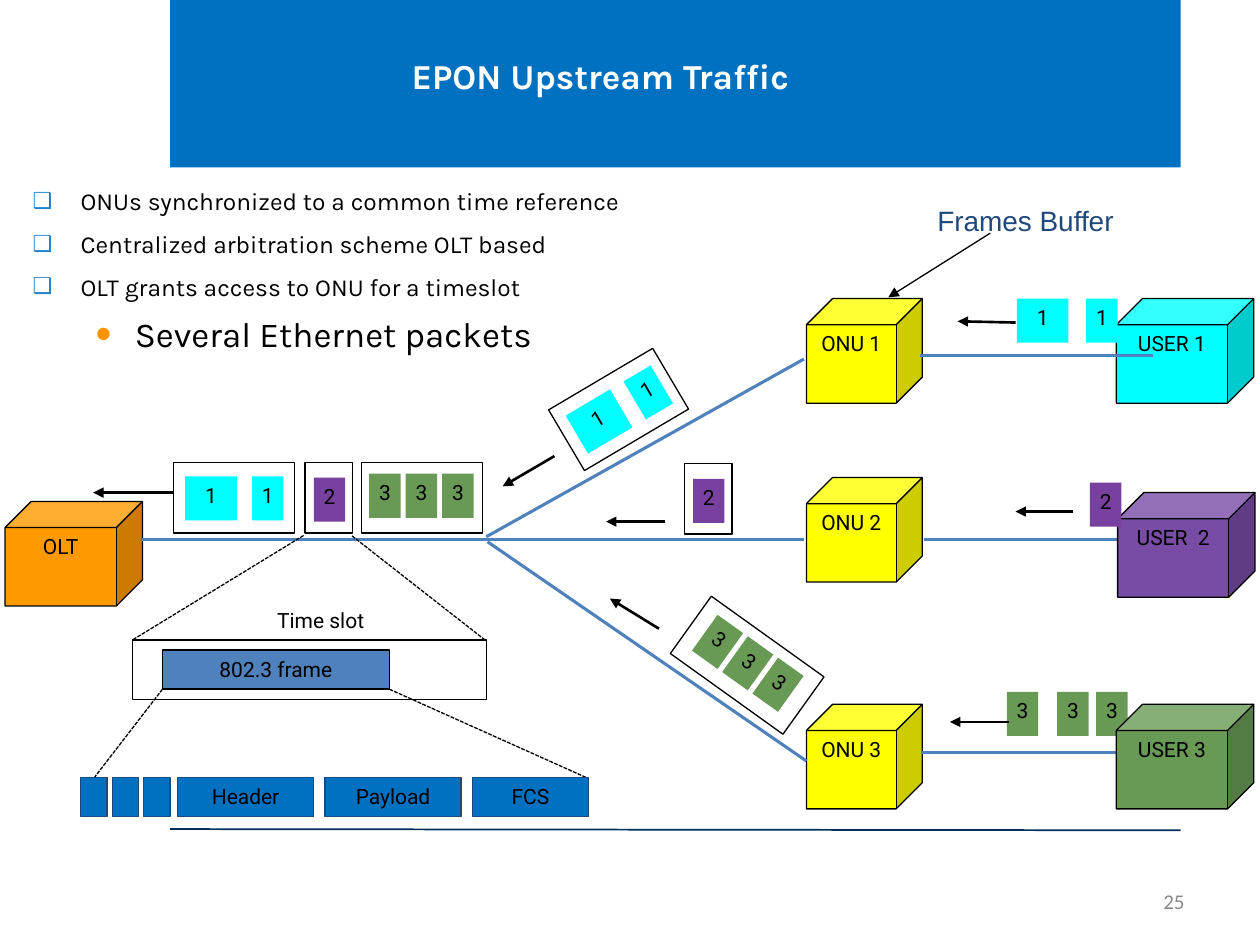
from dataclasses import dataclass
from typing import Optional

from pptx import Presentation
from pptx.dml.color import RGBColor
from pptx.enum.dml import MSO_LINE_DASH_STYLE as Dash
from pptx.enum.shapes import MSO_CONNECTOR, MSO_SHAPE as Shape
from pptx.enum.text import MSO_ANCHOR as Anchor, MSO_AUTO_SIZE as AutoSize, PP_ALIGN as Align
from pptx.oxml.ns import qn
from pptx.util import Emu, Pt

PX = 9144  # 100 px to the inch
BLACK, WHITE = "000000", "FFFFFF"
BLUE, NAVY, FIBER = "0070C0", "1F497D", "4F81BD"
YELLOW, CYAN, ORANGE = "FFFF00", "00FFFF", "FF9900"
PURPLE, VIOLET, GREEN = "7841A0", "784BA5", "689A56"


@dataclass
class Box:
    x: int
    y: int
    w: int
    h: int
    fill: Optional[str] = None
    text: str = ""
    line: Optional[str] = BLACK
    rot: float = 0
    kind: Shape = Shape.RECTANGLE


@dataclass
class Line:
    x1: int
    y1: int
    x2: int
    y2: int
    color: str = BLACK
    width: float = 1.5
    arrow: bool = False
    dashed: bool = False


def px(n: int) -> Emu:
    return Emu(n * PX)


def rgb(color: str) -> RGBColor:
    return RGBColor.from_string(color)


def place(sp, x: int, y: int, w: int, h: int) -> None:
    sp.left, sp.top, sp.width, sp.height = px(x), px(y), px(w), px(h)


def style(p, size: int, font: str, color: str = BLACK, align=Align.CENTER, bold: bool = False) -> None:
    p.alignment = align
    f = p.font
    f.size, f.name, f.bold = Pt(size), font, bold
    f.color.rgb = rgb(color)


def draw_box(slide, b: Box):
    sp = slide.shapes.add_shape(b.kind, px(b.x), px(b.y), px(b.w), px(b.h))
    sp.shadow.inherit = False
    sp.rotation = b.rot
    if b.fill:
        sp.fill.solid()
        sp.fill.fore_color.rgb = rgb(b.fill)
    else:
        sp.fill.background()
    if b.line:
        sp.line.color.rgb = rgb(b.line)
        sp.line.width = Pt(0.75)
    else:
        sp.line.fill.background()
    if b.text:
        tf = sp.text_frame
        tf.margin_left = tf.margin_right = 0
        tf.vertical_anchor = Anchor.TOP
        tf.text = b.text
        style(tf.paragraphs[0], 12, "Roboto")
    return sp


def draw_line(slide, n: Line) -> None:
    c = slide.shapes.add_connector(MSO_CONNECTOR.STRAIGHT, px(n.x1), px(n.y1), px(n.x2), px(n.y2))
    c.line.color.rgb = rgb(n.color)
    c.line.width = Pt(n.width)
    if n.dashed:
        c.line.dash_style = Dash.SQUARE_DOT
    props = c._element.spPr
    if n.arrow:
        ln = props.find(qn("a:ln"))
        ln.append(ln.makeelement(qn("a:tailEnd"), {"type": "triangle"}))
    props.append(props.makeelement(qn("a:effectLst"), {}))


def draw_text(slide, text: str, x: int, y: int, w: int, h: int, *font, anchor=Anchor.TOP) -> None:
    tf = slide.shapes.add_textbox(px(x), px(y), px(w), px(h)).text_frame
    tf.word_wrap = True
    tf.vertical_anchor = anchor
    tf.text = text
    style(tf.paragraphs[0], *font)


def set_bullet(p, char: str, color: str, size: int, left: int, hang: int) -> None:
    pr = p._p.get_or_add_pPr()
    pr.set("marL", str(px(left)))
    pr.set("indent", str(-px(hang)))
    clr = pr.makeelement(qn("a:buClr"), {})
    clr.append(clr.makeelement(qn("a:srgbClr"), {"val": color}))
    pr.append(clr)
    for tag, attrs in (("a:buSzPct", {"val": str(size * 1000)}),
                       ("a:buFont", {"typeface": "Arial"}),
                       ("a:buChar", {"char": char})):
        pr.append(pr.makeelement(qn(tag), attrs))


def cube(x: int, y: int, w: int, fill: str, text: str) -> Box:
    return Box(x, y, w, 83, fill, text, kind=Shape.CUBE)


def frame(x: int, y: int, text: str, w: int = 25, rot: float = 0) -> Box:
    fill = {"1": CYAN, "2": PURPLE, "3": GREEN}[text]
    return Box(x, y, w, 35, fill, text, None, rot)


def slot(x: int, y: int, w: int, rot: float = 0) -> Box:
    return Box(x, y, w, 56, rot=rot)


def fiber(x1: int, y1: int, x2: int, y2: int) -> Line:
    return Line(x1, y1, x2, y2, FIBER, 1.75)


def arrow(x1: int, y1: int, x2: int, y2: int, width: float = 1.5) -> Line:
    return Line(x1, y1, x2, y2, width=width, arrow=True)


def dashed(x1: int, y1: int, x2: int, y2: int) -> Line:
    return Line(x1, y1, x2, y2, width=0.75, dashed=True)


def field(x: int, w: int, text: str = "") -> Box:
    return Box(x, 617, w, 31, BLUE, text, NAVY)


UP, DOWN = 329.4, 35.6  # tilt of the slots on the two slanted branches

DIAGRAM = [
    # Network nodes
    *[cube(640, y, 92, YELLOW, f"ONU {i}") for i, y in enumerate((237, 379, 559), 1)],
    cube(886, 237, 109, CYAN, "USER 1"),
    cube(4, 398, 109, ORANGE, "OLT"),
    # Fibres
    fiber(387, 430, 640, 604), fiber(113, 428, 638, 428), fiber(386, 426, 638, 285),
    *[fiber(x, y, x + 185, y) for x, y in ((730, 282), (733, 428), (731, 597))],
    # Buffered frames at the users
    *[frame(x, 549, "3") for x in (870, 839, 799)],
    cube(887, 391, 109, VIOLET, "USER  2"),
    cube(886, 559, 109, GREEN, "USER 3"),
    frame(865, 383, "2"), frame(862, 237, "1"), frame(807, 237, "1", 41),
    # Slots on the branches
    *[frame(557 + 24 * i, 492 + 17 * i, "3", rot=DOWN) for i in range(3)],
    slot(538, 500, 110, DOWN),
    frame(550, 380, "2"), slot(543, 368, 38),
    slot(443, 297, 96, UP), frame(502, 294, "1", rot=UP), frame(455, 317, "1", 41, UP),
    # Slots on the trunk
    *[frame(293 + 29 * i, 376, "3") for i in range(3)], slot(287, 367, 96),
    frame(249, 379, "2"), slot(242, 367, 38),
    slot(138, 367, 96), frame(200, 378, "1"), frame(147, 378, "1", 41),
    # Direction of travel
    arrow(806, 256, 760, 255), arrow(137, 391, 74, 391), arrow(852, 406, 806, 406),
    arrow(801, 573, 754, 573), arrow(528, 414, 481, 414), arrow(523, 499, 484, 475),
    arrow(440, 362, 399, 386), arrow(786, 185, 705, 236, 0.75),
    # Time slot zoomed into a frame and its fields
    dashed(241, 425, 105, 508), dashed(385, 508, 279, 425),
    Box(105, 508, 281, 47), Box(129, 516, 180, 31, FIBER, "802.3 frame"),
    dashed(129, 547, 75, 617), dashed(465, 617, 309, 547),
    *[field(64 + 25 * i, 21) for i in range(3)],
    field(141, 108, "Header"), field(258, 108, "Payload"), field(375, 92, "FCS"),
]

POINTS = ["ONUs synchronized to a common time reference",
          "Centralized arbitration scheme OLT based",
          "OLT grants access to ONU for a timeslot",
          "Several Ethernet packets"]


def main() -> None:
    prs = Presentation()
    prs.slide_width, prs.slide_height = px(1000), px(750)
    s = prs.slides.add_slide(prs.slide_layouts[1])
    title, body = s.placeholders

    # Banner goes behind the title
    banner = draw_box(s, Box(135, 0, 802, 133, BLUE, line=None))
    s.shapes._spTree.insert(2, banner._element)
    draw_line(s, Line(135, 658, 937, 659, "002F5C", 1))

    place(title, 16, 0, 921, 125)
    title.text_frame.text = "EPON Upstream Traffic"
    title.text_frame.vertical_anchor = Anchor.MIDDLE
    p = title.text_frame.paragraphs[0]
    p.line_spacing = 0.85
    style(p, 20, "Karla", WHITE, bold=True)

    # Bulleted list, its last point one level down
    place(body, 16, 143, 892, 160)
    tf = body.text_frame
    tf.text = "\n".join(POINTS)
    tf.auto_size = AutoSize.NONE
    for i, p in enumerate(tf.paragraphs):
        sub = i == len(POINTS) - 1
        p.level = int(sub)
        p.space_before = Pt(0 if i == 0 else 5 if sub else 6)
        p.space_after = Pt(1.5)
        set_bullet(p, *(("•", "FF9201", 130, 81, 31) if sub else ("❑", "1F82CD", 90, 38, 38)))
        style(p, 20 if sub else 14, "Karla", align=Align.JUSTIFY)

    for item in DIAGRAM:
        (draw_box if isinstance(item, Box) else draw_line)(s, item)

    # Labels and slide number
    draw_text(s, "Time slot", 184, 477, 141, 30, 12, "Roboto")
    draw_text(s, "Frames Buffer", 734, 157, 219, 37, 16, "Arial", NAVY, Align.LEFT)
    draw_text(s, "25", 886, 695, 64, 40, 12, "Calibri", "898989", Align.RIGHT, anchor=Anchor.MIDDLE)
    prs.save("out.pptx")


if __name__ == "__main__":
    main()
